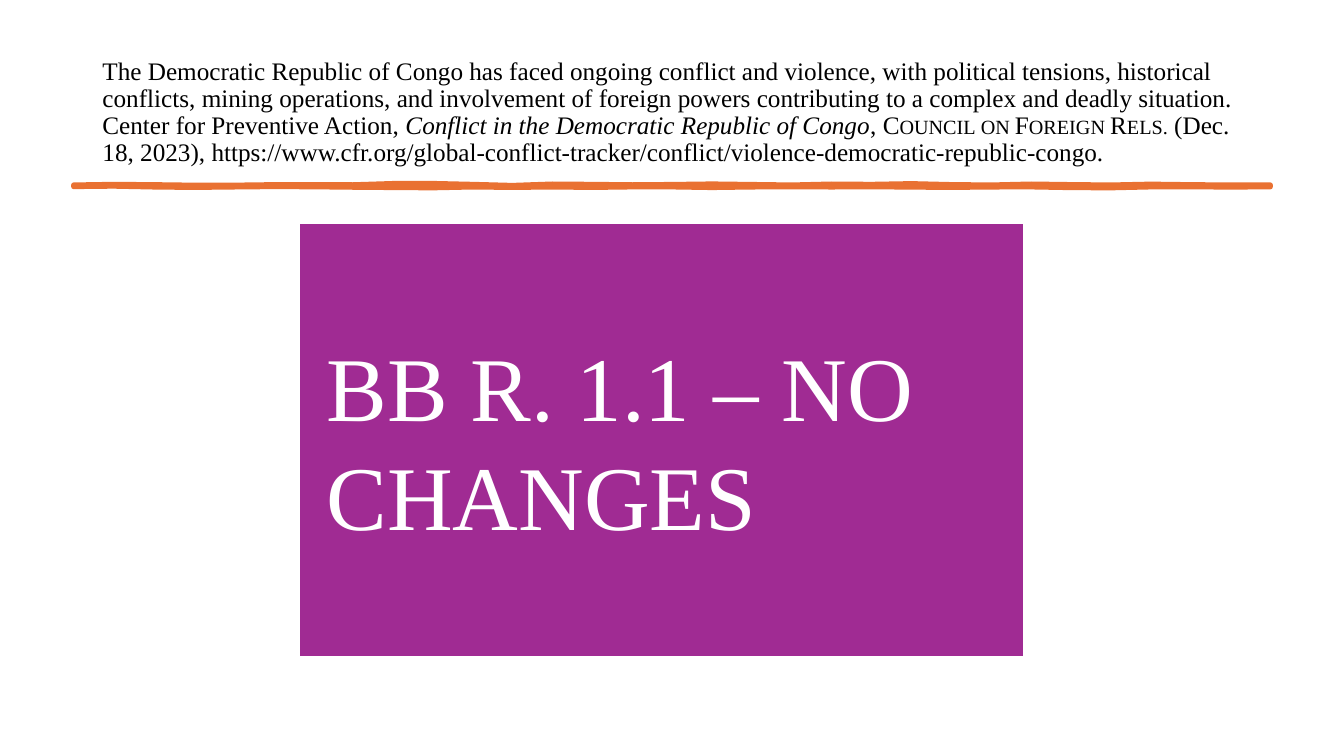
from lxml import etree
from pptx import Presentation
from pptx.dml.color import RGBColor
from pptx.enum import shapes, text
from pptx.oxml import ns
from pptx.util import Emu, Pt

BLACK = RGBColor(0x00, 0x00, 0x00)
WHITE = RGBColor(0xFF, 0xFF, 0xFF)
ORANGE = RGBColor(0xE9, 0x71, 0x32)
PURPLE = RGBColor(0xA0, 0x2B, 0x93)

# Citation spans: wording and style
CITATION = [
    ("The Democratic Republic of Congo has faced ongoing conflict and violence, "
     "with political tensions, historical conflicts, mining operations, and "
     "involvement of foreign powers contributing to a complex and deadly "
     "situation. Center for Preventive Action, ", "plain"),
    ("Conflict in the Democratic Republic of Congo", "italic"),
    (", ", "plain"),
    ("Council on Foreign Rels.", "small caps"),
    (" (Dec. 18, 2023), https://www.cfr.org/global-conflict-tracker/conflict/"
     "violence-democratic-republic-congo.", "plain"),
]

# Heights of the brush stroke's edges, in tenths of a px, at equal steps
UPPER_EDGE = [0, -6, -3, 2, 2, -3, -4, -2, -14, -15, -6, 4, -9, -6, -2, -5, -10,
              -5, 0, -9, -6, -13, -4, 0, -9, -4, 0, -8, -3, 0, 0]
LOWER_EDGE = [0, -4, 4, 8, 4, 0, 2, 6, 9, 12, 4, 8, 4, 8, 3, 3, 9,
              4, 2, 4, 2, 5, 8, 4, 3, 10, 12, 3, 2, 5, 2]


class SlideBuilder:
    PX = 9525  # EMU in one px, 96 px to the inch
    FONT = "Times New Roman"

    def __init__(self, width, height):
        self.deck = Presentation()
        self.deck.slide_width = self.px(width)
        self.deck.slide_height = self.px(height)
        self.page = self.deck.slides.add_slide(self.deck.slide_layouts[5])

    def px(self, length):
        return Emu(length * self.PX)

    def style(self, span, size, color):
        span.font.name = self.FONT
        span.font.size = Pt(size)
        span.font.color.rgb = color

    def title(self, left, top, width, height, spans, size):
        box = self.page.shapes.title
        box.left, box.top = self.px(left), self.px(top)
        box.width, box.height = self.px(width), self.px(height)
        frame = box.text_frame
        frame.word_wrap = True
        frame.auto_size = text.MSO_AUTO_SIZE.NONE
        frame.vertical_anchor = text.MSO_ANCHOR.MIDDLE
        para = frame.paragraphs[0]
        para.alignment = text.PP_ALIGN.LEFT
        para.line_spacing = 0.9
        for wording, look in spans:
            span = para.add_run()
            span.text = wording
            self.style(span, size, BLACK)
            span.font.italic = look == "italic"
            if look == "small caps":
                span.font._element.set("cap", "small")

    def brush_stroke(self, left, top, width, thickness, color, weight):
        step = width * 10 / (len(UPPER_EDGE) - 1)

        def edge(offsets, base):
            return [(left * 10 + i * step, base * 10 + offset)
                    for i, offset in enumerate(offsets)]

        points = edge(UPPER_EDGE, top) + edge(LOWER_EDGE, top + thickness)[::-1]
        builder = self.page.shapes.build_freeform(*points[0], scale=self.PX / 10)
        builder.add_line_segments(points[1:], close=True)
        stroke = builder.convert_to_shape()
        stroke.shadow.inherit = False
        stroke.fill.solid()
        stroke.fill.fore_color.rgb = color
        stroke.line.color.rgb = color
        stroke.line.width = Pt(weight)
        etree.SubElement(stroke.line._get_or_add_ln(), ns.qn("a:round"))

    def panel(self, left, top, width, height, wording, size, inset):
        box = self.page.shapes.add_shape(
            shapes.MSO_SHAPE.RECTANGLE,
            *map(self.px, (left, top, width, height)))
        box.shadow.inherit = False
        box.fill.solid()
        box.fill.fore_color.rgb = PURPLE
        box.line.color.rgb = WHITE
        box.line.width = Pt(1.5)
        frame = box.text_frame
        frame.text = wording
        frame.word_wrap = True
        frame.vertical_anchor = text.MSO_ANCHOR.MIDDLE
        frame.margin_left = frame.margin_right = self.px(inset)
        frame.margin_top = frame.margin_bottom = self.px(inset)
        para = frame.paragraphs[0]
        para.alignment = text.PP_ALIGN.LEFT
        self.style(para.runs[0], size, WHITE)


def main():
    slide = SlideBuilder(1280, 720)
    # Citation
    slide.title(88, 38, 1104, 139, CITATION, size=18)
    # Divider
    slide.brush_stroke(70, 176, 1140, 2, ORANGE, weight=3.25)
    # Rule panel
    slide.panel(285, 212, 690, 414, "BB R. 1.1 – NO CHANGES", size=65, inset=26)
    slide.deck.save("out.pptx")


if __name__ == "__main__":
    main()
